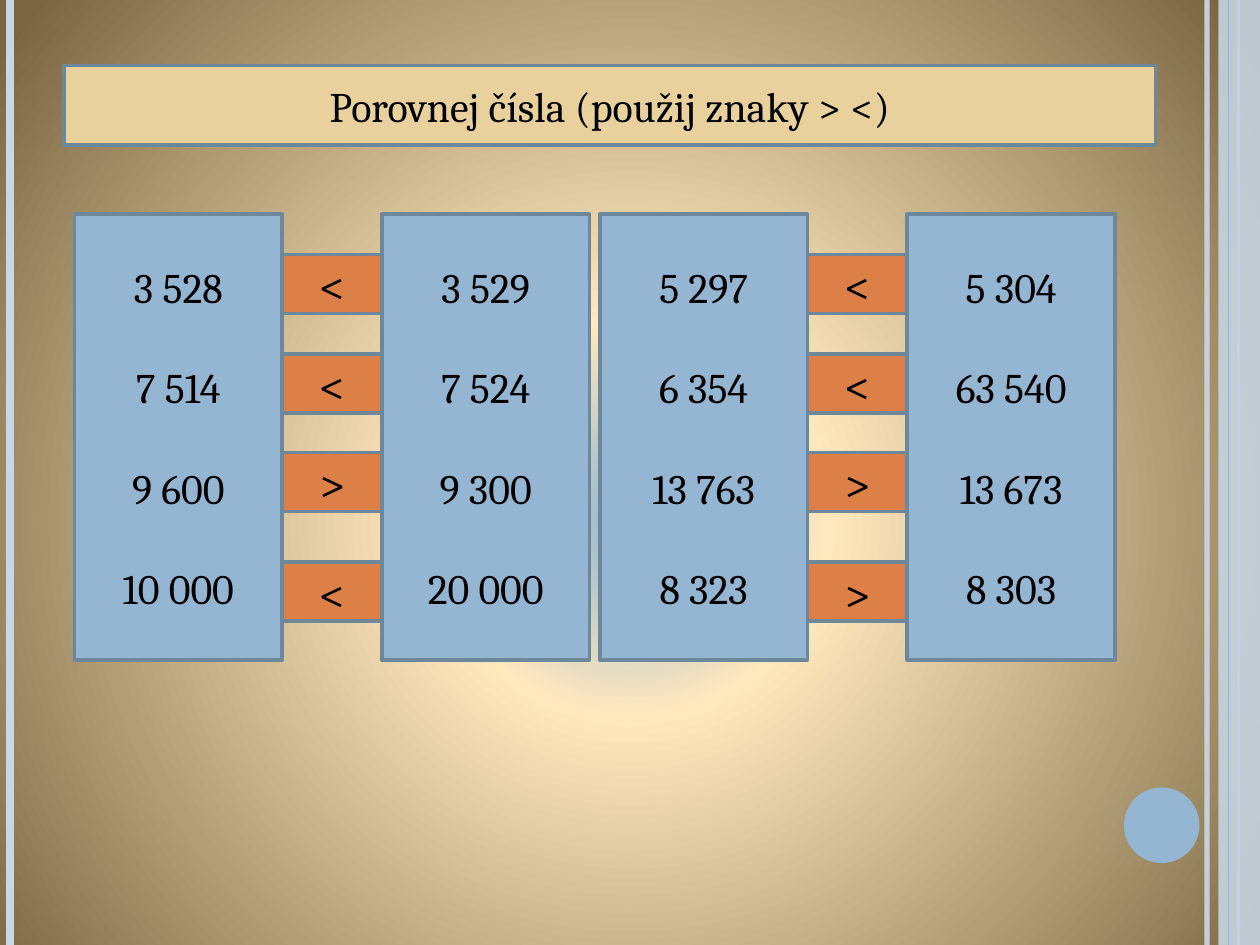
from dataclasses import dataclass

from lxml import etree
from pptx import Presentation
from pptx import util as u
from pptx.dml.color import RGBColor
from pptx.enum import shapes, text
from pptx.oxml import ns

FONT = "Cambria"
BLUE, PALE_BLUE, OUTLINE = "94B6D2", "C8D7E5", "6D879B"
SAND, ORANGE, BLACK = "E8D19D", "DD8047", "000000"

COLUMN_TOP, COLUMN_WIDTH, COLUMN_HEIGHT = 1.7, 1.65, 3.54
SIGN_WIDTH, SIGN_HEIGHT = 0.79, 0.47
SIGN_TOPS = (2.02, 2.81, 3.59, 4.46)
LINE_PITCH = 28.7


@dataclass
class Comparison:
    left: float
    first: tuple[str, ...]
    signs: str
    second: tuple[str, ...]


@dataclass
class Stripe:
    x: float
    color: str
    width: float
    opacity: int = 100


COMPARISONS = (
    Comparison(0.59, ("3 528", "7 514", "9 600", "10 000"), "<<><",
               ("3 529", "7 524", "9 300", "20 000")),
    Comparison(4.76, ("5 297", "6 354", "13 763", "8 323"), "<<>>",
               ("5 304", "63 540", "13 673", "8 303")),
)
BACK_STRIPES = (Stripe(9.58, PALE_BLUE, 3, 93), Stripe(0.08, PALE_BLUE, 4.5),
                Stripe(9.83, BLUE, 1.5))
FRONT_STRIPE = Stripe(9.75, BLUE, 0.75)
GRADIENT = ((0, "EBB391"), (0, "D4E2ED"), (0, BLUE), (25, "FFE8BE"), (100, "7A6742"))


def paint(color_format, color: str) -> None:
    color_format.rgb = RGBColor.from_string(color)


def fill_shape(shape, color: str, outline: str | None = None) -> None:
    shape.fill.solid()
    paint(shape.fill.fore_color, color)
    if outline:
        shape.line.width = u.Pt(2)
        paint(shape.line.color, outline)
    else:
        shape.line.fill.background()


def set_opacity(element, percent: int) -> None:
    color = next(element.iter(ns.qn("a:srgbClr")))
    etree.SubElement(color, ns.qn("a:alpha"), val=str(percent * 1000))


def set_background(slide) -> None:
    """Fill the slide with the radial gradient."""
    slide.background.fill.solid()
    solid = next(slide.element.iter(ns.qn("p:bgPr")))[0]
    gradient = etree.Element(ns.qn("a:gradFill"), rotWithShape="1")
    stops = etree.SubElement(gradient, ns.qn("a:gsLst"))
    for position, color in GRADIENT:
        stop = etree.SubElement(stops, ns.qn("a:gs"), pos=str(position * 1000))
        etree.SubElement(stop, ns.qn("a:srgbClr"), val=color)
    circle = etree.SubElement(gradient, ns.qn("a:path"), {"path": "circle"})
    etree.SubElement(circle, ns.qn("a:fillToRect"),
                     l="10000", t="110000", r="10000", b="100000")
    solid.getparent().replace(solid, gradient)


def add_stripe(slide, stripe: Stripe) -> None:
    x = u.Inches(stripe.x)
    line = slide.shapes.add_connector(shapes.MSO_CONNECTOR.STRAIGHT, x, 0, x, u.Inches(7.5))
    line.line.width = u.Pt(stripe.width)
    paint(line.line.color, stripe.color)
    properties = line.element.spPr
    etree.SubElement(properties, ns.qn("a:effectLst"))
    if stripe.opacity < 100:
        set_opacity(properties, stripe.opacity)


def add_shape(slide, kind, left: float, top: float, width: float, height: float,
              color: str, outline: str | None = None):
    shape = slide.shapes.add_shape(kind, *map(u.Inches, (left, top, width, height)))
    shape.shadow.inherit = False
    fill_shape(shape, color, outline)
    return shape


def write(shape, content: str, size: float) -> None:
    frame = shape.text_frame
    frame.text = content
    frame.word_wrap = True
    frame.vertical_anchor = text.MSO_ANCHOR.MIDDLE
    for paragraph in frame.paragraphs:
        paragraph.alignment = text.PP_ALIGN.CENTER
        for run in paragraph.runs:
            run.font.name = FONT
            run.font.size = u.Pt(size)
            paint(run.font.color, BLACK)


def add_column(slide, left: float, numbers: tuple[str, ...]) -> None:
    column = add_shape(slide, shapes.MSO_SHAPE.RECTANGLE, left, COLUMN_TOP,
                       COLUMN_WIDTH, COLUMN_HEIGHT, BLUE, OUTLINE)
    write(column, "\n".join(numbers), 24)
    for index, paragraph in enumerate(column.text_frame.paragraphs):
        paragraph.line_spacing = u.Pt(LINE_PITCH)
        paragraph.space_before = u.Pt(LINE_PITCH if index else 0)


def add_comparison(slide, comparison: Comparison) -> None:
    sign_left = comparison.left + COLUMN_WIDTH
    add_column(slide, comparison.left, comparison.first)
    add_column(slide, sign_left + SIGN_WIDTH, comparison.second)
    for top, sign in zip(SIGN_TOPS, comparison.signs):
        box = add_shape(slide, shapes.MSO_SHAPE.RECTANGLE, sign_left, top,
                        SIGN_WIDTH, SIGN_HEIGHT, ORANGE, OUTLINE)
        write(box, sign, 28)


def set_title(slide) -> None:
    title = slide.shapes.title
    title.left, title.top, title.width, title.height = map(u.Inches, (0.51, 0.52, 8.66, 0.63))
    fill_shape(title, SAND, OUTLINE)
    write(title, "Porovnej čísla (použij znaky > <)", 24)
    title.text_frame.auto_size = text.MSO_AUTO_SIZE.NONE


def main() -> None:
    presentation = Presentation()
    presentation.slide_width, presentation.slide_height = u.Inches(10), u.Inches(7.5)
    slide = presentation.slides.add_slide(presentation.slide_layouts.get_by_name("Title Only"))
    set_background(slide)
    for stripe in BACK_STRIPES:
        add_stripe(slide, stripe)
    band = add_shape(slide, shapes.MSO_SHAPE.RECTANGLE, 9.67, 0, 0.33, 7.5, PALE_BLUE)
    set_opacity(band.element.spPr, 87)
    add_stripe(slide, FRONT_STRIPE)
    add_shape(slide, shapes.MSO_SHAPE.OVAL, 8.92, 6.25, 0.6, 0.6, BLUE)
    set_title(slide)
    for comparison in COMPARISONS:
        add_comparison(slide, comparison)
    presentation.save("out.pptx")


if __name__ == "__main__":
    main()
